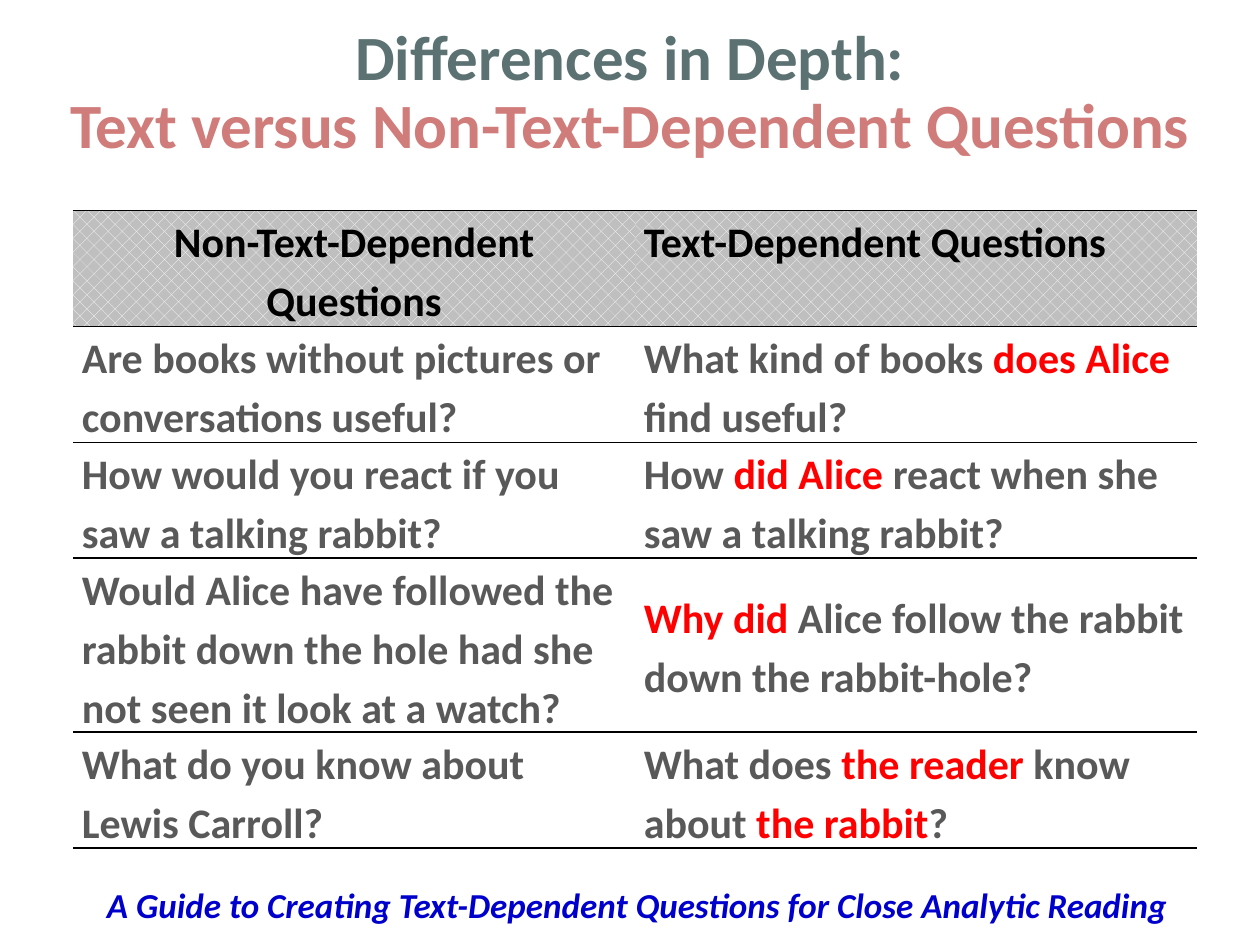
from lxml.etree import SubElement
from pptx import Presentation
from pptx.dml.color import RGBColor
from pptx.enum.dml import MSO_PATTERN
from pptx.enum.text import MSO_ANCHOR, PP_ALIGN
from pptx.oxml import parse_xml
from pptx.oxml.ns import nsdecls
from pptx.util import Inches, Pt

FONT = "Calibri"
COLORS = {
    "title": "5B7172", "subtitle": "D07C7A", "header": "000000",
    "body": "595959", "highlight": "FF0000", "footer": "0000CC",
    "rule": "000000", "hatch": "FFFFFF", "header_fill": "BFBFBF",
}
HEADERS = ["Non-Text-Dependent Questions", "Text-Dependent Questions"]
# Words between bars are highlighted; a line break starts a new paragraph
QUESTIONS = [
    ("Are books without pictures or conversations useful?",
     "What kind of books |does Alice |find useful?"),
    ("How would you react if you\nsaw a talking rabbit?",
     "How |did Alice |react when she saw a talking rabbit?"),
    ("Would Alice have followed the rabbit down the hole had she "
     "not seen it look at a watch?",
     "|Why did |Alice follow the rabbit down the rabbit-hole?"),
    ("What do you know about\nLewis Carroll?",
     "What does |the reader |know about |the rabbit|?"),
]
ROW_HEIGHTS = [0.92, 0.92, 0.92, 1.38, 0.92]


def rgb(name):
    return RGBColor.from_string(COLORS[name])


def style_run(run, size, color, italic=None):
    font = run.font
    font.name, font.size, font.bold, font.italic = FONT, Pt(size), True, italic
    font.color.rgb = rgb(color)


def add_title(slide, left, top, width, height):
    text_frame = slide.shapes.add_textbox(left, top, width, height).text_frame
    text_frame.word_wrap = True
    text_frame.vertical_anchor = MSO_ANCHOR.MIDDLE
    text_frame.text = "Differences in Depth:\nText versus Non-Text-Dependent Questions"
    for paragraph, color in zip(text_frame.paragraphs, ("title", "subtitle")):
        paragraph.alignment = PP_ALIGN.CENTER
        paragraph.line_spacing = 0.9
        style_run(paragraph.runs[0], 36, color)


def set_borders(cell):
    """Rule the top and bottom of a cell and leave its sides open."""
    properties = cell._tc.get_or_add_tcPr()
    for index, side in enumerate(("lnL", "lnR", "lnT", "lnB")):
        ruled = side in ("lnT", "lnB")
        fill = (f'<a:solidFill><a:srgbClr val="{COLORS["rule"]}"/></a:solidFill>'
                if ruled else "<a:noFill/>")
        properties.insert(index, parse_xml(
            f'<a:{side} {nsdecls("a")} w="{Pt(1)}">{fill}</a:{side}>'))


def fill_cell(cell, text, color):
    cell.margin_left = cell.margin_right = Inches(0.07)
    cell.margin_top = cell.margin_bottom = 0
    text_frame = cell.text_frame
    text_frame.text = text.replace("|", "")
    for paragraph, line in zip(text_frame.paragraphs, text.split("\n")):
        paragraph.line_spacing = 1.15
        paragraph.text = ""
        for index, part in enumerate(line.split("|")):
            if part:
                run = paragraph.add_run()
                run.text = part
                style_run(run, 24, "highlight" if index % 2 else color)


def add_question_table(slide, left, top, width, height):
    rows = [HEADERS, *QUESTIONS]
    table = slide.shapes.add_table(len(rows), 2, left, top, width, height).table
    table.first_row = table.horz_banding = False
    for row, row_height in zip(table.rows, ROW_HEIGHTS):
        row.height = Inches(row_height)
    for row_index, texts in enumerate(rows):
        is_header = row_index == 0
        for column_index, text in enumerate(texts):
            cell = table.cell(row_index, column_index)
            fill_cell(cell, text, "header" if is_header else "body")
            if is_header:
                cell.fill.patterned()
                cell.fill.pattern = MSO_PATTERN.PERCENT_25
                cell.fill.fore_color.rgb = rgb("hatch")
                cell.fill.back_color.rgb = rgb("header_fill")
            else:
                cell.fill.background()
                cell.vertical_anchor = MSO_ANCHOR.MIDDLE
            set_borders(cell)
    table.cell(0, 0).text_frame.paragraphs[0].alignment = PP_ALIGN.CENTER


def add_footer(slide, left, top, width, height):
    text_frame = slide.shapes.add_textbox(left, top, width, height).text_frame
    text_frame.word_wrap = False
    text_frame.text = ("A Guide to Creating Text-Dependent Questions "
                       "for Close Analytic Reading")
    style_run(text_frame.paragraphs[0].runs[0], 20, "footer", italic=True)


def main():
    presentation = Presentation()
    presentation.slide_width, presentation.slide_height = Inches(10), Inches(7.5)
    slide = presentation.slides.add_slide(presentation.slide_layouts[6])
    add_title(slide, 0, 0, Inches(10), Inches(1.5))
    add_question_table(slide, Inches(0.58), Inches(1.67),
                       Inches(8.92), Inches(sum(ROW_HEIGHTS)))
    add_footer(slide, Inches(0.75), Inches(6.96), Inches(8.72), Inches(0.44))
    presentation.save("out.pptx")


if __name__ == "__main__":
    main()
